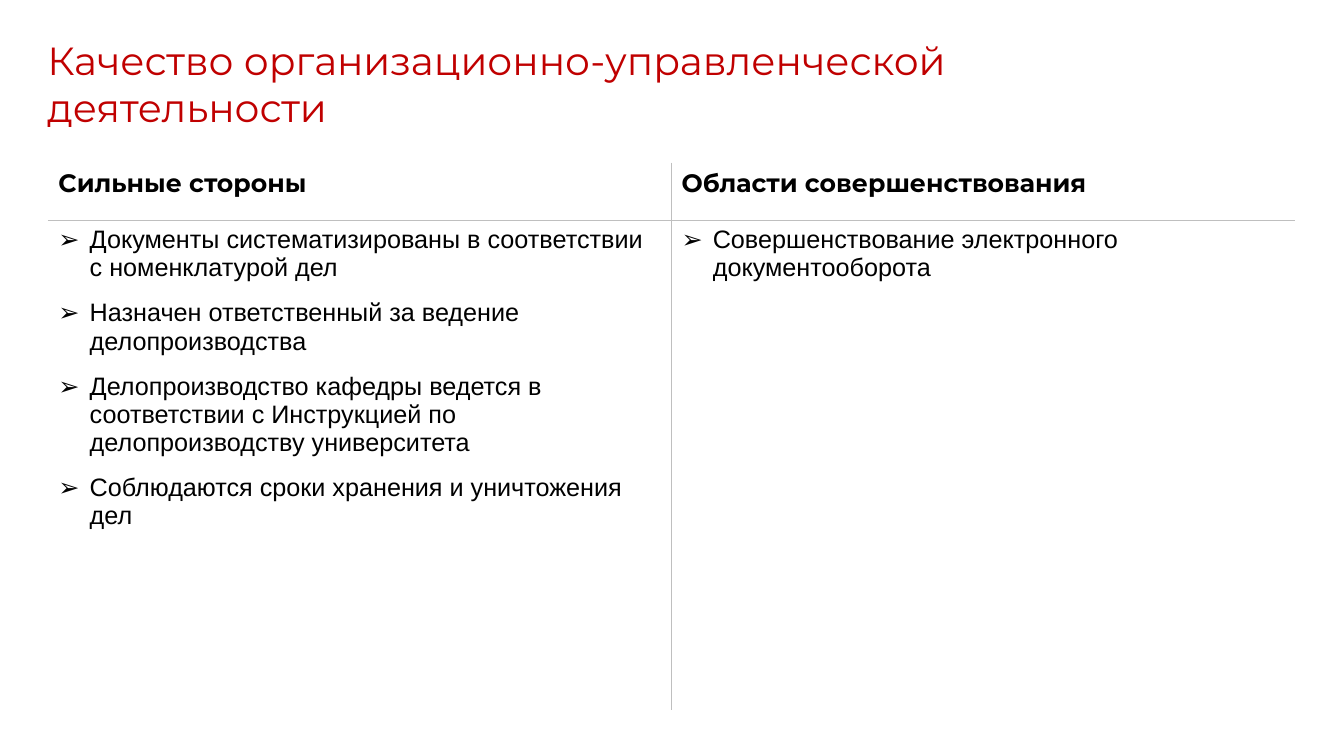
from lxml.etree import SubElement
from pptx import Presentation
from pptx.dml.color import RGBColor
from pptx.enum.text import MSO_ANCHOR, MSO_AUTO_SIZE, PP_ALIGN
from pptx.oxml import parse_xml
from pptx.oxml.ns import nsdecls, qn
from pptx.util import Inches, Pt

TITLE = ["Качество организационно-управленческой", "деятельности"]
COLUMNS = {
    "Сильные стороны": [
        "Документы систематизированы в соответствии с номенклатурой дел",
        "Назначен ответственный за ведение делопроизводства",
        "Делопроизводство кафедры ведется в соответствии с Инструкцией "
        "по делопроизводству университета",
        "Соблюдаются сроки хранения и уничтожения дел",
    ],
    "Области совершенствования": [
        "Совершенствование электронного документооборота",
    ],
}

THEME = {
    "title": {"name": "Montserrat", "size": Pt(28), "bold": False, "color": "C00000"},
    "heading": {"name": "Montserrat", "size": Pt(18), "bold": True, "color": "000000"},
    "item": {"name": "Arial", "size": Pt(18), "bold": False, "color": "000000"},
    "rule": "BFBFBF",
    "paper": "FFFFFF",
}
TITLE_BOX = {"left": 0.37, "top": 0.31, "width": 9.86, "height": 1.04}
TABLE_BOX = {"left": 0.48, "top": 1.62, "width": 12.36, "height": 5.43}
HEADING_HEIGHT = 0.57
BULLET_INDENT = Inches(0.31)


def write_lines(frame, lines, style):
    """Fill a text frame with one paragraph a line and return the paragraphs."""
    for number, line in enumerate(lines):
        para = frame.paragraphs[0] if number == 0 else frame.add_paragraph()
        para.alignment = PP_ALIGN.LEFT
        span = para.add_run()
        span.text = line
        for key, value in THEME[style].items():
            if key == "color":
                span.font.color.rgb = RGBColor.from_string(value)
            else:
                setattr(span.font, key, value)
    return frame.paragraphs


def add_bullet(para):
    properties = para._p.get_or_add_pPr()
    properties.set("marL", str(BULLET_INDENT))
    properties.set("indent", str(-BULLET_INDENT))
    SubElement(properties, qn("a:buFont"), typeface="Wingdings 3")
    properties[-1].set("typeface", "Arial")
    SubElement(properties, qn("a:buChar"), char="➢")


def set_borders(cell, inner_edges):
    """Draw grey lines on the inner edges and paper-coloured ones elsewhere."""
    for position, edge in enumerate("LRTB"):
        color = THEME["rule" if edge in inner_edges else "paper"]
        line = parse_xml(
            f'<a:ln{edge} {nsdecls("a")} w="{Pt(1)}"><a:solidFill>'
            f'<a:srgbClr val="{color}"/></a:solidFill></a:ln{edge}>'
        )
        cell._tc.get_or_add_tcPr().insert(position, line)


def add_title(page):
    title = page.shapes.title
    for side, length in TITLE_BOX.items():
        setattr(title, side, Inches(length))
    frame = title.text_frame
    frame.word_wrap = False
    frame.auto_size = MSO_AUTO_SIZE.NONE
    frame.vertical_anchor = MSO_ANCHOR.TOP
    for para in write_lines(frame, TITLE, "title"):
        para.line_spacing = 1.0
        para.space_before = Pt(0)


def add_comparison(page):
    place = [Inches(length) for length in TABLE_BOX.values()]
    table = page.shapes.add_table(2, len(COLUMNS), *place).table
    table.first_row = table.horz_banding = False
    table.rows[0].height = Inches(HEADING_HEIGHT)
    table.rows[1].height = Inches(TABLE_BOX["height"] - HEADING_HEIGHT)
    for column, (heading, items) in enumerate(COLUMNS.items()):
        side = "R" if column == 0 else "L"
        head, body = table.cell(0, column), table.cell(1, column)
        for cell, inner_edges in ((head, side + "B"), (body, side + "T")):
            cell.fill.background()
            set_borders(cell, inner_edges)
        write_lines(head.text_frame, [heading], "heading")
        for para in write_lines(body.text_frame, items, "item"):
            if len(items) > 1:
                para.space_before = Pt(12)
            add_bullet(para)


def main():
    deck = Presentation()
    deck.slide_width, deck.slide_height = Inches(13.33), Inches(7.5)
    page = deck.slides.add_slide(deck.slide_layouts[5])
    add_title(page)
    add_comparison(page)
    deck.save("out.pptx")


if __name__ == "__main__":
    main()
